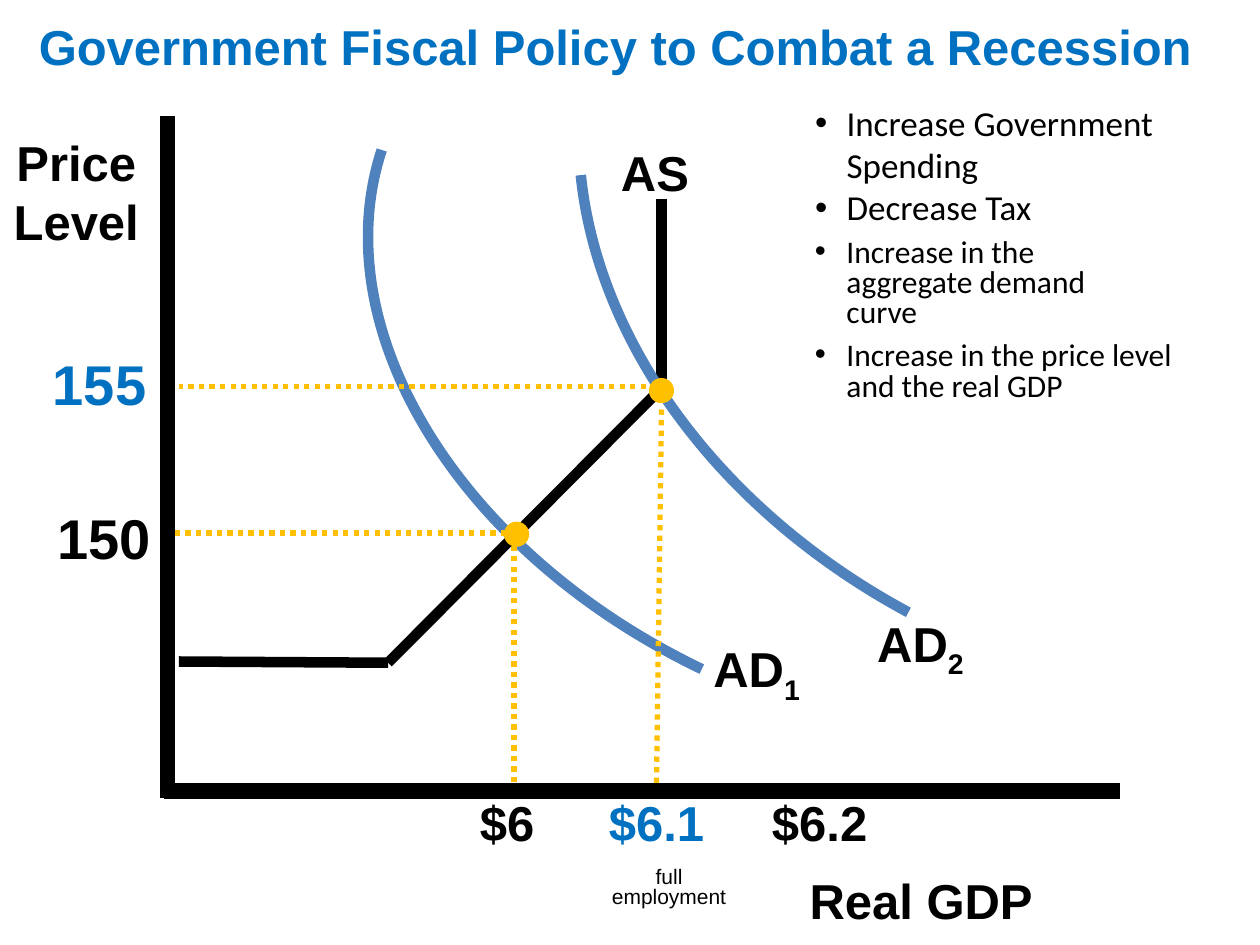
from collections import namedtuple
from dataclasses import dataclass
from lxml.etree import SubElement
from pptx import Presentation
from pptx.dml.color import RGBColor
from pptx.enum.dml import MSO_LINE_DASH_STYLE as Dash
from pptx.enum.shapes import MSO_CONNECTOR as Connector, MSO_SHAPE as Shape
from pptx.enum.text import PP_ALIGN as Align
from pptx.oxml.ns import qn
from pptx.util import Inches, Pt

Box = namedtuple("Box", "left top width height")


@dataclass(frozen=True)
class Theme:
    ink: RGBColor = RGBColor(0, 0, 0)
    paper: RGBColor = RGBColor(255, 255, 255)
    accent: RGBColor = RGBColor(0x00, 0x70, 0xC0)
    demand: RGBColor = RGBColor(0x4F, 0x81, 0xBD)
    guide: RGBColor = RGBColor(0xFF, 0xC0, 0x00)
    heading_font: str = "Arial"
    body_font: str = "Calibri"
    price: int = 32
    heading: int = 28
    body: int = 20
    detail: int = 18
    note: int = 12
    axis_line: int = 9
    curve_line: int = 6
    guide_line: int = 3


THEME = Theme()


def inside(region, left, top, width, height):
    return Box(region.left + left, region.top + top, width, height)


def add_span(para, text, size, color=THEME.ink, font=THEME.heading_font, bold=True):
    span = para.add_run()
    span.text = text
    span.font.name = font
    span.font.size = Pt(size)
    span.font.bold = bold
    span.font.color.rgb = color
    return span


def add_frame(page, box):
    holder = page.shapes.add_textbox(*map(Inches, box))
    holder.text_frame.word_wrap = True
    return holder


def add_label(page, box, text, size=THEME.heading, color=THEME.ink, bold=True,
              align=Align.CENTER, spacing=0.8, subscript=""):
    para = add_frame(page, box).text_frame.paragraphs[0]
    para.alignment = align
    para.line_spacing = spacing
    add_span(para, text, size, color, bold=bold)
    if subscript:
        span = add_span(para, subscript, size, color, bold=bold)
        span.font._element.set("baseline", "-25000")


def add_line(page, region, start, end, color, width, dash=None):
    points = [Inches(value) for x, y in (start, end)
              for value in (region.left + x, region.top + y)]
    line = page.shapes.add_connector(Connector.STRAIGHT, *points)
    line.line.color.rgb = color
    line.line.width = Pt(width)
    if dash:
        line.line.dash_style = dash
    SubElement(line._element.spPr, qn("a:effectLst"))


def add_curve(page, region, points):
    start, *rest = [(Inches(region.left + x), Inches(region.top + y)) for x, y in points]
    builder = page.shapes.build_freeform(*start)
    builder.add_line_segments(rest, close=False)
    curve = builder.convert_to_shape()
    curve.shadow.inherit = False
    curve.fill.background()
    curve.line.color.rgb = THEME.demand
    curve.line.width = Pt(THEME.curve_line)
    outline = curve._element.spPr.find(".//" + qn("a:path"))
    segments = outline.findall(qn("a:lnTo"))
    bezier = SubElement(outline, qn("a:cubicBezTo"))
    for segment in segments:
        bezier.append(segment[0])
        outline.remove(segment)


def add_dot(page, region, center, size=0.2):
    x, y = center
    box = inside(region, x - size / 2, y - size / 2, size, size)
    dot = page.shapes.add_shape(Shape.OVAL, *map(Inches, box))
    dot.shadow.inherit = False
    dot.fill.solid()
    dot.fill.fore_color.rgb = THEME.guide
    dot.line.fill.background()


def add_title(page, box):
    holder = add_frame(page, box)
    holder.fill.solid()
    holder.fill.fore_color.rgb = THEME.paper
    add_span(holder.text_frame.paragraphs[0],
             "Government Fiscal Policy to Combat a Recession",
             THEME.heading, THEME.accent)


def add_plot(page, region):
    add_curve(page, region, [(4.24, 4.39), (2.32, 3.47), (1.23, 1.7), (1.7, 0.27)])

    guides = [((2.77, 3.31), (0, 3.31)), ((3.88, 2.15), (0.09, 2.15)),
              ((2.75, 3.41), (2.75, 5.33)), ((3.92, 2.33), (3.88, 5.33))]
    for start, end in guides:
        add_line(page, region, start, end, THEME.guide, THEME.guide_line, Dash.ROUND_DOT)

    supply = [(0.09, 4.33), (1.75, 4.34), (3.92, 2.16), (3.92, 0.66)]
    for start, end in zip(supply, supply[1:]):
        add_line(page, region, start, end, THEME.ink, THEME.curve_line)

    add_curve(page, region, [(5.88, 3.94), (4.41, 3.15), (3.42, 1.83), (3.28, 0.47)])
    for center in ((2.77, 3.32), (3.92, 2.18)):
        add_dot(page, region, center)

    add_line(page, region, (0, 0), (0, 5.41), THEME.ink, THEME.axis_line)
    add_line(page, region, (-0.03, region.height), (region.width, region.height),
             THEME.ink, THEME.axis_line)

    add_label(page, inside(region, 3.5, 0.16, 1, 0.53), "AS",
              align=Align.LEFT, spacing=1)
    add_label(page, inside(region, 4.05, 4.15, 1.25, 0.48), "AD", subscript="1")
    add_label(page, inside(region, 5.35, 3.95, 1.25, 0.48), "AD", subscript="2")


def add_price_axis(page, region):
    add_label(page, inside(region, 0, 0, 1.61, 0.95), "Price Level", spacing=1)
    add_label(page, inside(region, 0.45, 1.83, 1.08, 0.54), "155",
              THEME.price, THEME.accent)
    add_label(page, inside(region, 0.4, 3.05, 1.25, 0.53), "150", THEME.price)


def add_output_axis(page, region):
    ticks = [("$6", 0, 0.89, THEME.ink), ("$6.1", 1.09, 1.08, THEME.accent),
             ("$6.2", 2.09, 1.67, THEME.ink)]
    for text, left, width, color in ticks:
        add_label(page, inside(region, left, 0, width, 0.48), text, color=color)
    add_label(page, inside(region, 1.17, 0.51, 1.12, 0.42), "full employment",
              THEME.note, bold=False)
    add_label(page, inside(region, 2.69, 0.53, 2.08, 0.52), "Real GDP", spacing=1)


def add_bullets(page, box, lines, size, spacing):
    frame = add_frame(page, box).text_frame
    for index, text in enumerate(lines):
        para = frame.add_paragraph() if index else frame.paragraphs[0]
        para.line_spacing = spacing
        props = para._p.get_or_add_pPr()
        props.set("marL", str(Inches(0.25)))
        props.set("indent", str(Inches(-0.25)))
        SubElement(props, qn("a:buFont")).set("typeface", THEME.heading_font)
        SubElement(props, qn("a:buChar")).set("char", "•")
        add_span(para, text, size, font=THEME.body_font, bold=False)


def add_policy_notes(page, region):
    add_bullets(page, inside(region, 0, 0, 3.55, 1.08),
                ["Increase Government Spending", "Decrease Tax"], THEME.body, 1)
    add_bullets(page, inside(region, 0, 1.09, 2.56, 0.83),
                ["Increase in the aggregate demand curve"], THEME.detail, 0.8)
    add_bullets(page, inside(region, 0, 1.91, 3.06, 0.59),
                ["Increase in the price level and the real GDP"], THEME.detail, 0.8)


def main():
    deck = Presentation()
    deck.slide_width, deck.slide_height = Inches(10), Inches(7.5)
    page = deck.slides.add_slide(deck.slide_layouts[6])
    add_plot(page, Box(1.33, 0.92, 7.56, 5.36))
    add_title(page, Box(0.21, 0.08, 9.54, 0.53))
    add_price_axis(page, Box(-0.2, 1, 1.61, 3.58))
    add_output_axis(page, Box(3.58, 6.33, 4.77, 1.05))
    add_policy_notes(page, Box(6.37, 0.76, 3.55, 2.5))
    deck.save("out.pptx")


if __name__ == "__main__":
    main()
